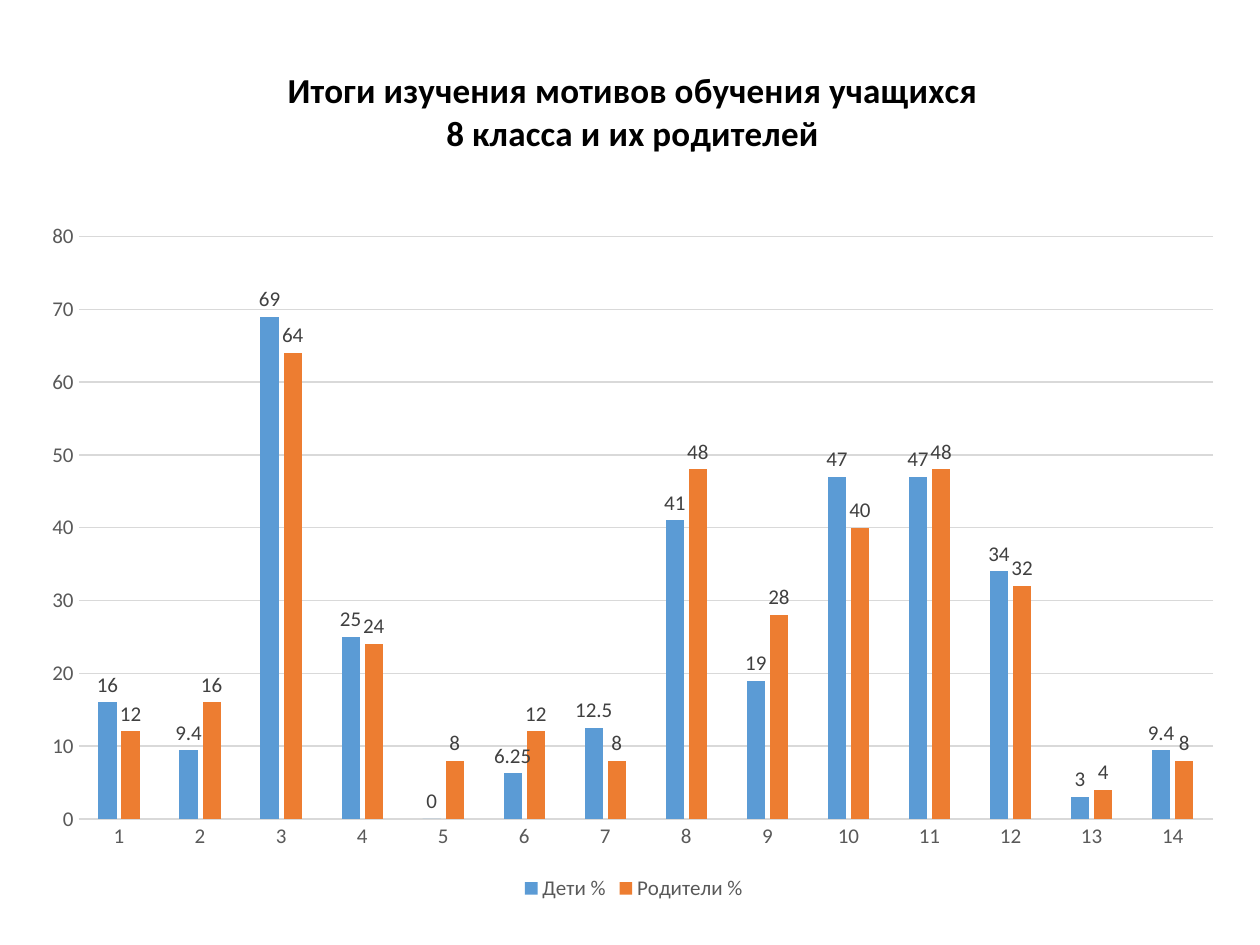
from dataclasses import dataclass

from lxml import etree
from pptx import Presentation
from pptx import util as u
from pptx.chart import data as chart_data
from pptx.dml import color
from pptx.enum import chart as ch
from pptx.enum import text
from pptx.oxml import ns


@dataclass(frozen=True)
class Theme:
    """Colours, font and type sizes of the slide."""
    font: str = "Calibri"
    title_size: int = 20
    label_size: int = 12
    title: str = "000000"
    axis: str = "595959"
    value: str = "404040"
    rule: str = "D9D9D9"
    children: str = "5B9BD5"
    parents: str = "ED7D31"


THEME = Theme()
TITLE = ("Итоги изучения мотивов обучения учащихся", "8 класса и их родителей")
RESULTS = {
    "Дети %": (THEME.children,
               (16, 9.4, 69, 25, 0, 6.25, 12.5, 41, 19, 47, 47, 34, 3, 9.4)),
    "Родители %": (THEME.parents,
                   (12, 16, 64, 24, 8, 12, 8, 48, 28, 40, 48, 32, 4, 8)),
}


def style_font(font, size, rgb, bold=False):
    """Set the typeface, size, colour and weight of a font."""
    font.name = THEME.font
    font.size = u.Pt(size)
    font.bold = bold
    font.color.rgb = color.RGBColor.from_string(rgb)


def style_line(line, rgb):
    """Give a line its colour and the common width."""
    line.color.rgb = color.RGBColor.from_string(rgb)
    line.width = u.Pt(0.75)


def write_text(paragraph, content, size, rgb, bold=False):
    """Write one centred paragraph in the given format."""
    paragraph.alignment = text.PP_ALIGN.CENTER
    run = paragraph.add_run()
    run.text = content
    style_font(run.font, size, rgb, bold)


def place(part, index, target=None, **fractions):
    """Lay out a chart part by fractions of the chart area."""
    for old in part.findall(ns.qn("c:layout")):
        part.remove(old)
    layout = etree.Element(ns.qn("c:layout"))
    manual = etree.SubElement(layout, ns.qn("c:manualLayout"))
    settings = {"layoutTarget": target} if target else {}
    settings |= {"xMode": "edge", "yMode": "edge"} | fractions
    for tag, value in settings.items():
        etree.SubElement(manual, ns.qn(f"c:{tag}")).set("val", str(value))
    part.insert(index, layout)


def add_title(chart):
    """Add the two-line chart title."""
    chart.has_title = True
    title = chart.chart_title
    frame = title.text_frame
    for number, line in enumerate(TITLE):
        paragraph = frame.add_paragraph() if number else frame.paragraphs[0]
        write_text(paragraph, line, size=THEME.title_size, rgb=THEME.title, bold=True)
    title.include_in_layout = False
    place(title._element, 1, x=0.21, y=0.03)


def style_axes(chart):
    """Format the question axis and the percentage axis."""
    questions, percent = chart.category_axis, chart.value_axis
    for axis in (questions, percent):
        axis.major_tick_mark = axis.minor_tick_mark = ch.XL_TICK_MARK.NONE
        style_font(axis.tick_labels.font, THEME.label_size, THEME.axis)
    style_line(questions.format.line, THEME.rule)
    percent.format.line.fill.background()
    percent.minimum_scale, percent.maximum_scale, percent.major_unit = 0, 80, 10
    percent.has_major_gridlines = True
    style_line(percent.major_gridlines.format.line, THEME.rule)


def style_bars(plot):
    """Colour the bars and show their values."""
    plot.gap_width, plot.overlap, plot.vary_by_categories = 219, -27, False
    for series, (rgb, _) in zip(plot.series, RESULTS.values()):
        series.invert_if_negative = False
        series.format.fill.solid()
        series.format.fill.fore_color.rgb = color.RGBColor.from_string(rgb)
        labels = series.data_labels
        labels.show_value = True
        labels.position = ch.XL_LABEL_POSITION.OUTSIDE_END
        style_font(labels.font, THEME.label_size, THEME.value)


def add_legend(chart):
    """Add the legend below the bars."""
    chart.has_legend = True
    chart.legend.position = ch.XL_LEGEND_POSITION.BOTTOM
    chart.legend.include_in_layout = False
    style_font(chart.legend.font, THEME.label_size, THEME.axis)


def add_motives_chart(slide):
    """Add the chart comparing the motives of children and parents."""
    motives = chart_data.CategoryChartData()
    motives.categories = [str(number) for number in range(1, 15)]
    for name, (_, values) in RESULTS.items():
        motives.add_series(name, values)
    chart = slide.shapes.add_chart(
        ch.XL_CHART_TYPE.COLUMN_CLUSTERED,
        u.Pt(17.3), u.Pt(20.9), u.Pt(689.8), u.Pt(496.8), motives).chart
    style_font(chart.font, THEME.label_size, THEME.axis)
    add_title(chart)
    style_axes(chart)
    style_bars(chart.plots[0])
    add_legend(chart)
    plot_area = chart._chartSpace.chart.plotArea
    place(plot_area, 0, target="inner", x=0.04, y=0.23, w=0.94, h=0.67)


def main():
    """Build and save the slide."""
    deck = Presentation()
    deck.slide_width, deck.slide_height = u.Pt(720), u.Pt(540)
    slide = deck.slides.add_slide(deck.slide_layouts[6])
    add_motives_chart(slide)
    deck.save("out.pptx")


if __name__ == "__main__":
    main()
